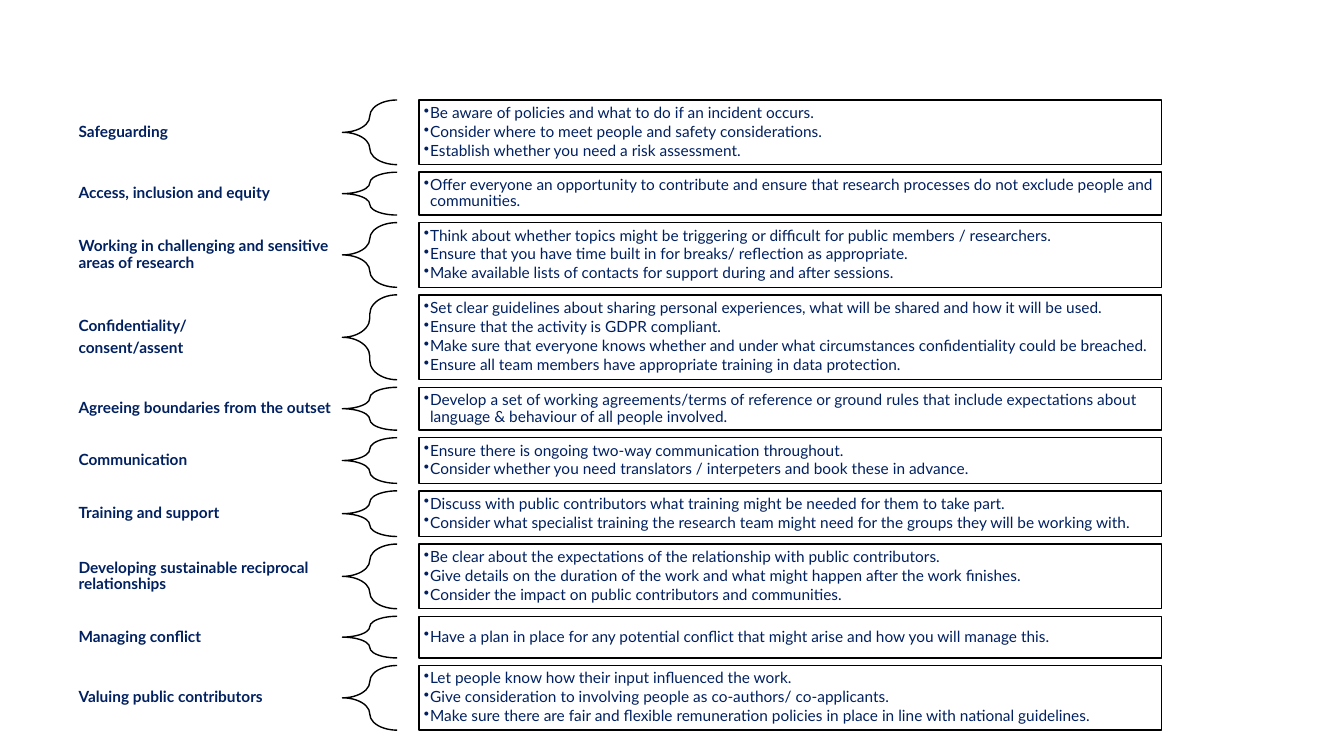
from lxml import etree
from pptx import Presentation
from pptx import util as u
from pptx.dml.color import RGBColor
from pptx.enum import shapes, text
from pptx.oxml import ns

NAVY = RGBColor(0x00, 0x20, 0x60)
BLACK = RGBColor(0x00, 0x00, 0x00)
WHITE = RGBColor(0xFF, 0xFF, 0xFF)

TOP, GAP = 2.52, 0.19

# Theme, box height in cm, advice
ROWS = [
    (["Safeguarding"], 1.63, [
        "Be aware of policies and what to do if an incident occurs.",
        "Consider where to meet people and safety considerations.",
        "Establish whether you need a risk assessment."]),
    (["Access, inclusion and equity"], 1.08, [
        "Offer everyone an opportunity to contribute and ensure that research "
        "processes do not exclude people and communities."]),
    (["Working in challenging and sensitive areas of research"], 1.63, [
        "Think about whether topics might be triggering or difficult for public members / researchers.",
        "Ensure that you have time built in for breaks/ reflection as appropriate.",
        "Make available lists of contacts for support during and after sessions."]),
    (["Confidentiality/", "consent/assent"], 2.14, [
        "Set clear guidelines about sharing personal experiences, what will be shared and how it will be used.",
        "Ensure that the activity is GDPR compliant.",
        "Make sure that everyone knows whether and under what circumstances confidentiality could be breached.",
        "Ensure all team members have appropriate training in data protection."]),
    (["Agreeing boundaries from the outset"], 1.08, [
        "Develop a set of working agreements/terms of reference or ground rules that "
        "include expectations about language & behaviour of all people involved."]),
    (["Communication"], 1.15, [
        "Ensure there is ongoing two-way communication throughout.",
        "Consider whether you need translators / interpeters and book these in advance."]),
    (["Training and support"], 1.15, [
        "Discuss with public contributors what training might be needed for them to take part.",
        "Consider what specialist training the research team might need for the groups they will be working with."]),
    (["Developing sustainable reciprocal relationships"], 1.63, [
        "Be clear about the expectations of the relationship with public contributors.",
        "Give details on the duration of the work and what might happen after the work finishes.",
        "Consider the impact on public contributors and communities."]),
    (["Managing conflict"], 1.05, [
        "Have a plan in place for any potential conflict that might arise and how you will manage this."]),
    (["Valuing public contributors"], 1.63, [
        "Let people know how their input influenced the work.",
        "Give consideration to involving people as co-authors/ co-applicants.",
        "Make sure there are fair and flexible remuneration policies in place in line with national guidelines."]),
]


def write(shape, lines, side, edge, after, bold=False, bullet=False):
    frame = shape.text_frame
    frame.word_wrap = True
    frame.vertical_anchor = text.MSO_ANCHOR.MIDDLE
    frame.margin_left = frame.margin_right = u.Cm(side)
    frame.margin_top = frame.margin_bottom = u.Cm(edge)
    for i, line in enumerate(lines):
        para = frame.paragraphs[0] if i == 0 else frame.add_paragraph()
        para.alignment = text.PP_ALIGN.LEFT
        para.line_spacing = 0.9
        para.space_after = u.Pt(after)
        if bullet:
            props = para._p.get_or_add_pPr()
            props.set("marL", str(u.Cm(0.16)))
            props.set("indent", str(-u.Cm(0.16)))
            etree.SubElement(props, ns.qn("a:buChar")).set("char", "•")
        run = para.add_run()
        run.text = line
        run.font.name = "Lato"
        run.font.size = u.Pt(11)
        run.font.bold = bold
        run.font.color.rgb = NAVY


def draw(kind, left, top, width, height):
    shape = slide.shapes.add_shape(
        kind, u.Cm(left), u.Cm(top), u.Cm(width), u.Cm(height))
    shape.shadow.inherit = False
    shape.line.color.rgb = BLACK
    shape.line.width = u.Pt(1)
    return shape


deck = Presentation()
deck.slide_width, deck.slide_height = u.Cm(33.87), u.Cm(19.05)
slide = deck.slides.add_slide(deck.slide_layouts[6])

top = TOP
for theme, height, advice in ROWS:
    # Theme, centred on its row
    tall = 1.04 if len(theme) == 1 else 1.17
    label = slide.shapes.add_textbox(
        u.Cm(1.75), u.Cm(top + (height - tall) / 2), u.Cm(6.88), u.Cm(tall))
    write(label, theme, 0.23, 0.08, 3.85, bold=True)

    # Brace
    brace = draw(shapes.MSO_SHAPE.LEFT_BRACE, 8.63, top, 1.38, height)
    brace.adjustments[0] = 0.35
    brace.fill.background()

    # Advice box
    box = draw(shapes.MSO_SHAPE.RECTANGLE, 10.56, top, 18.72, height)
    box.fill.solid()
    box.fill.fore_color.rgb = WHITE
    write(box, advice, 0.12, 0.12, 1.65, bullet=True)

    top += height + GAP

deck.save("out.pptx")
